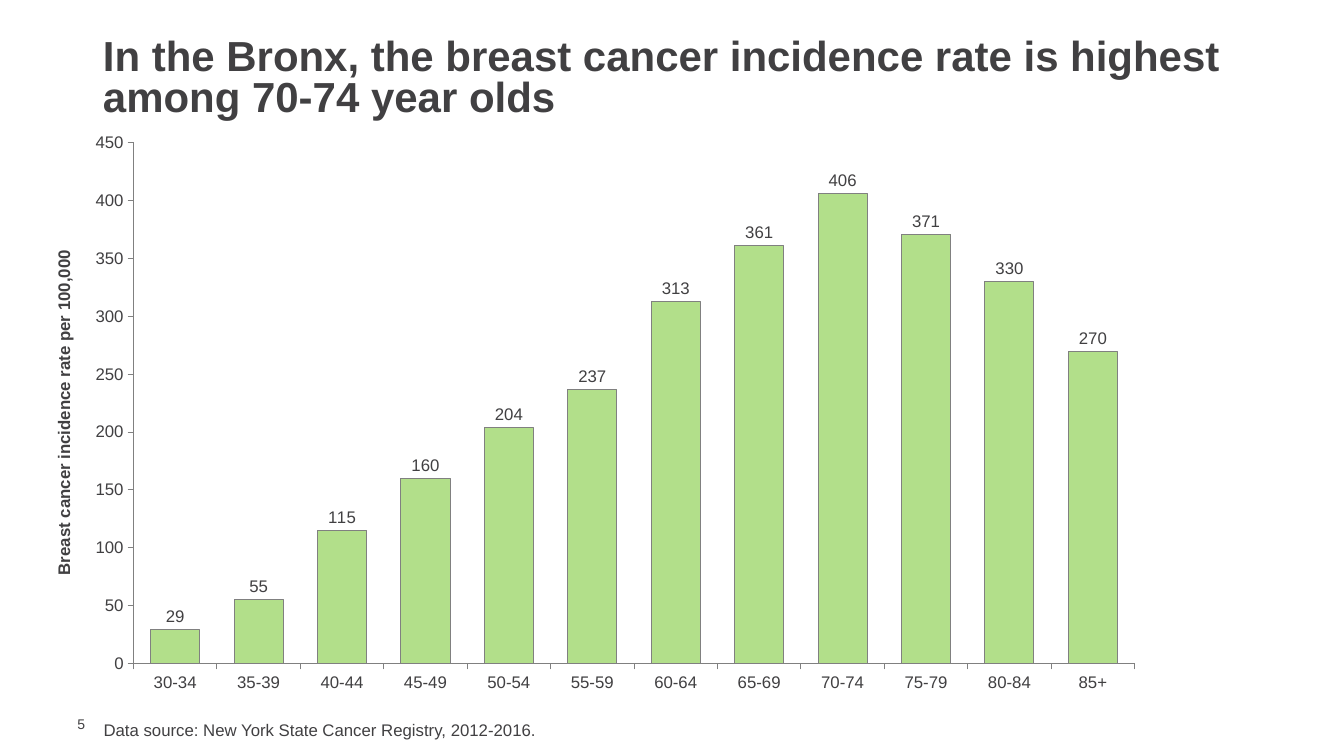
import pptx
import pptx.chart.data
import pptx.dml.color
import pptx.enum.chart
import pptx.enum.text
import pptx.oxml
import pptx.oxml.ns
import pptx.util
from pptx.util import Cm

INK = pptx.dml.color.RGBColor(0x41, 0x40, 0x42)
GRAY = pptx.dml.color.RGBColor(0x80, 0x80, 0x80)
GREEN = pptx.dml.color.RGBColor(0xB2, 0xDF, 0x8A)
FONT = "Arial"
MIDDLE = pptx.enum.text.MSO_ANCHOR.MIDDLE
TOP = pptx.enum.text.MSO_ANCHOR.TOP

RATES = {
    "30-34": 29, "35-39": 55, "40-44": 115, "45-49": 160,
    "50-54": 204, "55-59": 237, "60-64": 313, "65-69": 361,
    "70-74": 406, "75-79": 371, "80-84": 330, "85+": 270,
}
PLOT_LAYOUT = {"x": 0.075, "y": 0.029, "w": 0.903, "h": 0.903}


def format_font(font, size, bold=False):
    """Apply the slide's typeface and ink colour to a font."""
    font.name = FONT
    font.size = pptx.util.Pt(size)
    font.bold = bold
    font.color.rgb = INK


def write_text(frame, text, size=12, bold=False, anchor=TOP, line_spacing=None):
    """Write one formatted paragraph into a text frame."""
    frame.word_wrap = True
    frame.auto_size = pptx.enum.text.MSO_AUTO_SIZE.NONE
    frame.vertical_anchor = anchor
    paragraph = frame.paragraphs[0]
    paragraph.alignment = pptx.enum.text.PP_ALIGN.LEFT
    paragraph.line_spacing = line_spacing
    run = paragraph.add_run()
    run.text = text
    format_font(run.font, size, bold)


def format_line(line):
    """Give a line the thin gray stroke shared by axes and bars."""
    line.color.rgb = GRAY
    line.width = pptx.util.Pt(0.75)


def add_title(slide, left, top, width, height):
    """Move and fill the title placeholder."""
    title = slide.shapes.title
    title.left, title.top, title.width, title.height = left, top, width, height
    write_text(title.text_frame,
               "In the Bronx, the breast cancer incidence rate is highest "
               "among 70-74 year olds",
               size=30, bold=True, anchor=MIDDLE, line_spacing=0.8)


def format_axis(axis):
    """Style an axis with outside ticks and no gridlines."""
    axis.has_major_gridlines = False
    axis.major_tick_mark = pptx.enum.chart.XL_TICK_MARK.OUTSIDE
    axis.minor_tick_mark = pptx.enum.chart.XL_TICK_MARK.NONE
    format_font(axis.tick_labels.font, 12)
    format_line(axis.format.line)


def place_plot(chart):
    """Fix the inner plot area as fractions of the chart box."""
    plot_area = chart.plots[0]._element.getparent()
    for layout in plot_area.findall(pptx.oxml.ns.qn("c:layout")):
        plot_area.remove(layout)
    settings = {"layoutTarget": "inner", "xMode": "edge", "yMode": "edge", **PLOT_LAYOUT}
    children = "".join(f'<c:{name} val="{value}"/>' for name, value in settings.items())
    plot_area.insert(0, pptx.oxml.parse_xml(
        f'<c:layout {pptx.oxml.ns.nsdecls("c")}>'
        f"<c:manualLayout>{children}</c:manualLayout></c:layout>"))


def add_rate_chart(slide, left, top, width, height):
    """Add the column chart of incidence rate by age group."""
    data = pptx.chart.data.CategoryChartData(number_format="0")
    data.categories = list(RATES)
    data.add_series("Series 1", list(RATES.values()))
    chart = slide.shapes.add_chart(
        pptx.enum.chart.XL_CHART_TYPE.COLUMN_CLUSTERED,
        left, top, width, height, data).chart
    chart.has_title = False
    chart.has_legend = False
    format_font(chart.font, 10)

    format_axis(chart.category_axis)
    value_axis = chart.value_axis
    format_axis(value_axis)
    value_axis.minimum_scale, value_axis.maximum_scale = 0, 450
    value_axis.major_unit = 50
    value_axis.tick_labels.number_format = "0"
    value_axis.tick_labels.number_format_is_linked = False
    run = value_axis.axis_title.text_frame.paragraphs[0].add_run()
    run.text = "Breast cancer incidence rate per 100,000"
    format_font(run.font, 12, bold=True)

    plot = chart.plots[0]
    plot.gap_width = 70
    plot.vary_by_categories = False
    bars = plot.series[0].format
    bars.fill.solid()
    bars.fill.fore_color.rgb = GREEN
    format_line(bars.line)
    plot.has_data_labels = True
    labels = plot.data_labels
    labels.show_value = True
    labels.number_format = "0"
    labels.number_format_is_linked = False
    labels.position = pptx.enum.chart.XL_LABEL_POSITION.OUTSIDE_END
    format_font(labels.font, 12)
    place_plot(chart)


def add_footer(slide, left, top, width, height):
    """Add the page number and the data source beside it."""
    number = slide.shapes.add_textbox(left, top, Cm(1.1), Cm(0.43)).text_frame
    number.margin_top = number.margin_right = number.margin_bottom = 0
    write_text(number, "5", size=10, anchor=MIDDLE)
    indent = Cm(0.66)
    source = slide.shapes.add_textbox(left + indent, top, width - indent, height)
    write_text(source.text_frame, "Data source: New York State Cancer Registry, 2012-2016.")


def main():
    """Build and save the slide."""
    presentation = pptx.Presentation()
    presentation.slide_width = Cm(33.87)
    presentation.slide_height = Cm(19.05)
    slide = presentation.slides.add_slide(presentation.slide_layouts[5])
    add_title(slide, Cm(2.34), Cm(0.86), Cm(29.2), Cm(2.3))
    add_rate_chart(slide, Cm(1.27), Cm(3.18), Cm(27.94), Cm(14.53))
    add_footer(slide, Cm(1.7), Cm(18.02), Cm(25.86), Cm(0.76))
    presentation.save("out.pptx")


if __name__ == "__main__":
    main()
